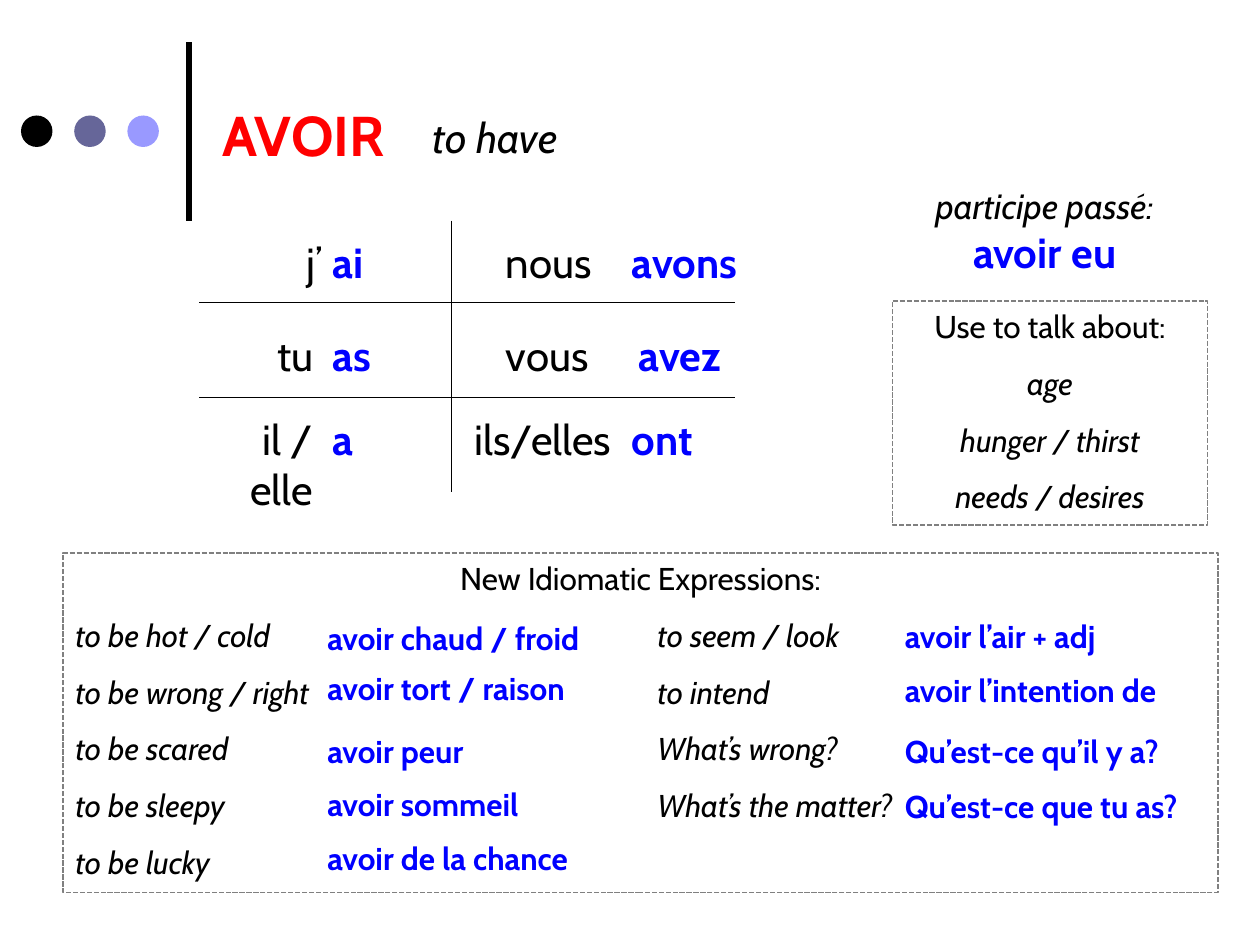
from dataclasses import dataclass

from lxml.etree import SubElement
from pptx import Presentation
from pptx.dml.color import RGBColor
from pptx.enum.dml import MSO_LINE_DASH_STYLE as Dash
from pptx.enum.shapes import MSO_CONNECTOR_TYPE as Connector
from pptx.enum.shapes import MSO_SHAPE as Shape
from pptx.enum.text import MSO_ANCHOR as Anchor
from pptx.enum.text import MSO_AUTO_SIZE as AutoSize
from pptx.enum.text import PP_ALIGN as Align
from pptx.oxml.ns import qn
from pptx.util import Pt

BLACK = RGBColor(0x00, 0x00, 0x00)
SLATE = RGBColor(0x66, 0x66, 0x99)
LILAC = RGBColor(0x99, 0x99, 0xFF)
RED = RGBColor(0xFF, 0x00, 0x00)
BLUE = RGBColor(0x00, 0x00, 0xFF)
GRAY = RGBColor(0x80, 0x80, 0x80)
FONT = "Cabin"


@dataclass(frozen=True)
class Style:
    size: float
    color: RGBColor = BLACK
    bold: bool = False
    italic: bool = False


@dataclass(frozen=True)
class Label:
    text: str
    left: float
    top: float
    width: float
    height: float
    style: Style
    align: Align = Align.LEFT


@dataclass(frozen=True)
class Rule:
    x1: float
    y1: float
    x2: float
    y2: float
    weight: float = 0.75


@dataclass(frozen=True)
class Panel:
    heading: str
    lines: tuple[str, ...]
    left: float
    top: float
    width: float
    height: float
    align: Align
    tab: float = 0


TITLE = Style(32, RED, bold=True)
MEANING = Style(24, italic=True)
PRONOUN = Style(24)
VERB = Style(24, BLUE, bold=True)
HEADING = Style(18)
ENGLISH = Style(18, italic=True)
FRENCH = Style(18, BLUE, bold=True)
PARTICIPLE = Style(20, italic=True)

ROW_TOPS = (131.5, 185, 232.5)
PRONOUNS_LEFT = (("j’", 150, 41.5), ("tu", 132, 54), ("il / elle", 108, 78))
PRONOUNS_RIGHT = (("nous", 282, 78), ("vous", 282, 78), ("ils/elles", 264, 96))
VERBS_LEFT = (("ai", 183, 69), ("as", 183, 57), ("a", 183, 54))
VERBS_RIGHT = (("avons", 354, 144), ("avez", 358, 140), ("ont", 354, 150))
CONJUGATION = (
    (PRONOUNS_LEFT, PRONOUN, Align.RIGHT),
    (VERBS_LEFT, VERB, Align.LEFT),
    (PRONOUNS_RIGHT, PRONOUN, Align.LEFT),
    (VERBS_RIGHT, VERB, Align.LEFT),
)

IDIOMS = (
    (180, 180, (
        ("avoir chaud / froid", 350),
        ("avoir tort / raison", 378.5),
        ("avoir peur", 415),
        ("avoir sommeil", 445),
        ("avoir de la chance", 476),
    )),
    (510, 186, (
        ("avoir l’air + adj", 349),
        ("avoir l’intention de", 380),
        ("Qu’est-ce qu’il y a?", 415),
        ("Qu’est-ce que tu as?", 446),
    )),
)

HEADERS = (
    Label("AVOIR", 120, 54, 114, 46, TITLE),
    Label("to have", 240, 60, 150, 36.5, MEANING),
    Label("participe passé:", 516, 102, 162, 31.5, PARTICIPLE, Align.CENTER),
    Label("avoir eu", 516, 126, 162, 36.5, VERB, Align.CENTER),
)

RULES = (
    Rule(108, 126, 108, 24, 3),
    Rule(114, 173, 420, 173),
    Rule(114, 227, 420, 227),
    Rule(258, 126, 258, 281),
)

PANELS = (
    Panel(
        "New Idiomatic Expressions:",
        (
            "to be hot / cold\tto seem / look",
            "to be wrong / right\tto intend",
            "to be scared\tWhat’s wrong?",
            "to be sleepy\tWhat’s the matter?",
            "to be lucky",
        ),
        36, 316, 660, 194, Align.LEFT, tab=332.5,
    ),
    Panel(
        "Use to talk about:",
        ("age", "hunger / thirst", "needs / desires"),
        510, 172, 180, 128, Align.CENTER,
    ),
)


def write(paragraph, text: str, style: Style, align: Align) -> None:
    paragraph.alignment = align
    run = paragraph.add_run()
    run.text = text
    formats = {
        "name": FONT,
        "size": Pt(style.size),
        "bold": style.bold,
        "italic": style.italic,
    }
    for attribute, value in formats.items():
        setattr(run.font, attribute, value)
    run.font.color.rgb = style.color


def prepare(frame) -> None:
    formats = {
        "word_wrap": True,
        "auto_size": AutoSize.SHAPE_TO_FIT_TEXT,
        "vertical_anchor": Anchor.TOP,
    }
    for attribute, value in formats.items():
        setattr(frame, attribute, value)


def draw_label(slide, label: Label) -> None:
    bounds = (label.left, label.top, label.width, label.height)
    frame = slide.shapes.add_textbox(*map(Pt, bounds)).text_frame
    prepare(frame)
    write(frame.paragraphs[0], label.text, label.style, label.align)


def draw_rule(slide, rule: Rule) -> None:
    ends = map(Pt, (rule.x1, rule.y1, rule.x2, rule.y2))
    line = slide.shapes.add_connector(Connector.STRAIGHT, *ends)
    line.line.color.rgb = BLACK
    line.line.width = Pt(rule.weight)
    SubElement(line._element.spPr, qn("a:effectLst"))


def draw_dot(slide, left: float, color: RGBColor) -> None:
    dot = slide.shapes.add_shape(Shape.OVAL, Pt(left), Pt(66), Pt(18), Pt(18))
    dot.shadow.inherit = False
    dot.fill.solid()
    dot.fill.fore_color.rgb = color
    dot.line.fill.background()


def draw_panel(slide, panel: Panel) -> None:
    bounds = map(Pt, (panel.left, panel.top, panel.width, panel.height))
    box = slide.shapes.add_shape(Shape.RECTANGLE, *bounds)
    box.shadow.inherit = False
    box.fill.background()
    box.line.color.rgb = GRAY
    box.line.width = Pt(1)
    box.line.dash_style = Dash.SQUARE_DOT
    frame = box.text_frame
    prepare(frame)
    heading = frame.paragraphs[0]
    write(heading, panel.heading, HEADING, Align.CENTER)
    heading.space_after = Pt(10.8)
    for text in panel.lines:
        paragraph = frame.add_paragraph()
        write(paragraph, text, ENGLISH, panel.align)
        paragraph.space_after = Pt(10.8)
        if panel.tab:
            stops = SubElement(paragraph._p.get_or_add_pPr(), qn("a:tabLst"))
            SubElement(stops, qn("a:tab"), pos=str(Pt(panel.tab)), algn="l")


def main() -> None:
    deck = Presentation()
    deck.slide_width, deck.slide_height = Pt(720), Pt(540)
    slide = deck.slides.add_slide(deck.slide_layouts[6])
    for rule in RULES:
        draw_rule(slide, rule)
    for index, color in enumerate((BLACK, SLATE, LILAC)):
        draw_dot(slide, 12 + 30.4 * index, color)
    for panel in PANELS:
        draw_panel(slide, panel)
    for header in HEADERS:
        draw_label(slide, header)
    for words, style, align in CONJUGATION:
        for (word, left, width), top in zip(words, ROW_TOPS):
            draw_label(slide, Label(word, left, top, width, 36.5, style, align))
    for left, width, idioms in IDIOMS:
        for idiom, top in idioms:
            draw_label(slide, Label(idiom, left, top, width, 29, FRENCH))
    deck.save("out.pptx")


if __name__ == "__main__":
    main()
